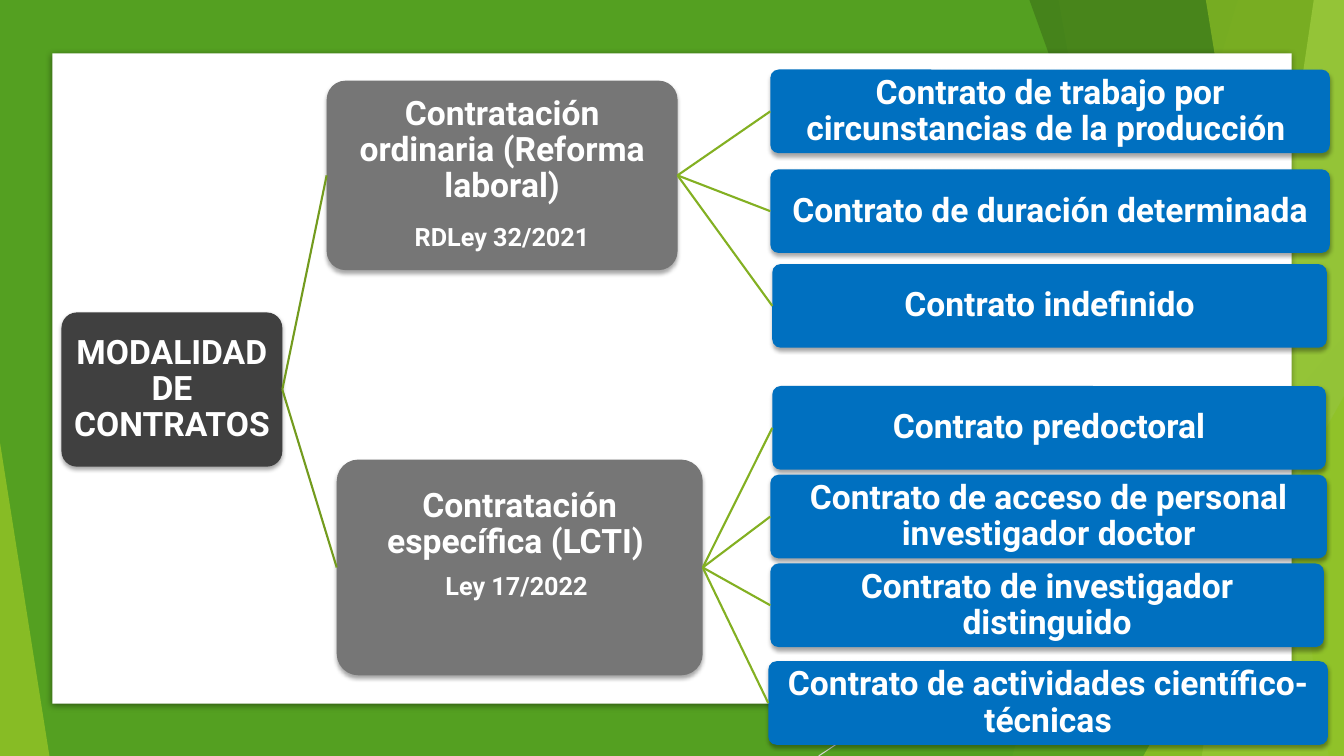
from dataclasses import dataclass

from lxml.etree import SubElement
from pptx import Presentation
from pptx.dml.color import RGBColor
from pptx.enum.shapes import MSO_CONNECTOR, MSO_SHAPE
from pptx.enum.text import MSO_ANCHOR, PP_ALIGN
from pptx.oxml.ns import qn
from pptx.shapes.autoshape import Shape
from pptx.shapes.connector import Connector
from pptx.slide import Slide
from pptx.util import Inches, Pt

WHITE = RGBColor(0xFF, 0xFF, 0xFF)
BLACK = RGBColor(0x00, 0x00, 0x00)
CHARCOAL = RGBColor(0x40, 0x40, 0x40)
GREY = RGBColor(0x76, 0x76, 0x76)
BLUE = RGBColor(0x00, 0x70, 0xC0)
GREEN = RGBColor(0x54, 0xA0, 0x21)
LIME = RGBColor(0x90, 0xC2, 0x26)
DARK_GREEN = RGBColor(0x3F, 0x78, 0x19)
PALE_LIME = RGBColor(0xC0, 0xE4, 0x74)
ROOT_LINE = RGBColor(0x73, 0x9B, 0x1E)
BRANCH_LINE = RGBColor(0x83, 0xB0, 0x22)
PALE_LINE = RGBColor(0xD9, 0xD9, 0xD9)

WIDTH, HEIGHT = 13.33, 7.5
FONT = "Roboto"
RIGHT_SIDE, LEFT_SIDE = 3, 1
LEAF_HEIGHT = 0.83


@dataclass(frozen=True)
class Band:
    """Translucent facet from the top edge to the bottom edge, on the right."""
    top_x: float
    bottom_x: float
    color: RGBColor
    opacity: int


@dataclass(frozen=True)
class Triangle:
    """Translucent right triangle standing on the bottom edge."""
    left: float
    top: float
    width: float
    apex: float
    color: RGBColor
    opacity: int


@dataclass(frozen=True)
class Shadow:
    opacity: int
    blur: float
    distance: float


@dataclass(frozen=True)
class Box:
    left: float
    top: float
    width: float
    height: float
    color: RGBColor
    text: str
    law: str = ""
    law_gap: int = 0
    bottom_inset: float = 0.05


@dataclass(frozen=True)
class Branch:
    box: Box
    leaves: tuple[Box, ...]


def leaf(left: float, top: float, width: float, text: str) -> Box:
    return Box(left, top, width, LEAF_HEIGHT, BLUE, text)


FACETS: tuple[Band | Triangle, ...] = (
    Band(12.28, 10.04, LIME, 30),
    Band(10.5, 11.83, LIME, 20),
    Triangle(9.77, 3.33, 3.56, 1, GREEN, 72),
    Band(10.21, 12.91, DARK_GREEN, 70),
    Band(13.03, 11.92, PALE_LIME, 70),
    Band(11.96, 13.18, LIME, 65),
    Triangle(11.34, 3.93, 1.99, 1, LIME, 80),
    Triangle(0, 4.39, 0.49, 0, LIME, 85),
)
PANEL_SHADOW = Shadow(43, 5, 1.4)
BOX_SHADOW = Shadow(35, 3, 2)

ROOT = Box(0.61, 3.1, 2.19, 1.53, CHARCOAL, "MODALIDAD DE CONTRATOS")
BRANCHES = (
    Branch(
        Box(3.24, 0.8, 3.48, 1.88, GREY, "Contratación ordinaria (Reforma laboral)",
            "RDLey 32/2021", 14, 0.08),
        (
            leaf(7.64, 0.69, 5.55, "Contrato de trabajo por circunstancias de la producción "),
            leaf(7.64, 1.68, 5.55, "Contrato de duración determinada"),
            leaf(7.66, 2.62, 5.5, "Contrato indefinido"),
        ),
    ),
    Branch(
        Box(3.34, 4.56, 3.63, 2.14, GREY, "Contratación específica (LCTI) ",
            "Ley 17/2022 ", 9, 0.5),
        (
            leaf(7.66, 3.83, 5.49, "Contrato predoctoral"),
            leaf(7.64, 4.71, 5.52, "Contrato de acceso de personal investigador doctor"),
            leaf(7.64, 5.59, 5.49, "Contrato de investigador distinguido"),
            leaf(7.62, 6.56, 5.55, "Contrato de actividades científico-técnicas"),
        ),
    ),
)


def paint(shape: Shape, color: RGBColor, opacity: int = 100) -> None:
    shape.shadow.inherit = False
    shape.fill.solid()
    shape.fill.fore_color.rgb = color
    shape.line.fill.background()
    if opacity < 100:
        color_element = shape.fill._xPr.find(qn("a:solidFill"))[0]
        SubElement(color_element, qn("a:alpha"), val=str(opacity * 1000))


def add_shadow(shape: Shape, shadow: Shadow) -> None:
    effects = shape._element.spPr.find(qn("a:effectLst"))
    outer = SubElement(effects, qn("a:outerShdw"), blurRad=str(Pt(shadow.blur)),
                       dist=str(Pt(shadow.distance)), dir="5400000", rotWithShape="0")
    color = SubElement(outer, qn("a:srgbClr"), val=str(BLACK))
    SubElement(color, qn("a:alpha"), val=str(shadow.opacity * 1000))


def add_preset(slide: Slide, kind: MSO_SHAPE, left: float, top: float,
               width: float, height: float) -> Shape:
    return slide.shapes.add_shape(kind, Inches(left), Inches(top),
                                  Inches(width), Inches(height))


def add_facet(slide: Slide, facet: Band | Triangle) -> None:
    if isinstance(facet, Triangle):
        shape = add_preset(slide, MSO_SHAPE.ISOSCELES_TRIANGLE, facet.left, facet.top,
                           facet.width, HEIGHT - facet.top)
        shape.adjustments[0] = facet.apex
    else:
        corners = ((WIDTH, 0), (WIDTH, HEIGHT), (facet.bottom_x, HEIGHT))
        builder = slide.shapes.build_freeform(Inches(facet.top_x), 0)
        builder.add_line_segments([(Inches(x), Inches(y)) for x, y in corners], close=True)
        shape = builder.convert_to_shape()
    paint(shape, facet.color, facet.opacity)


def add_line(slide: Slide, start: tuple[float, float], end: tuple[float, float],
             color: RGBColor, weight: float) -> Connector:
    ends = [Inches(value) for value in (*start, *end)]
    line = slide.shapes.add_connector(MSO_CONNECTOR.STRAIGHT, *ends)
    line.line.color.rgb = color
    line.line.width = Pt(weight)
    SubElement(line._element.spPr, qn("a:effectLst"))
    return line


def add_box(slide: Slide, box: Box) -> Shape:
    shape = add_preset(slide, MSO_SHAPE.ROUNDED_RECTANGLE,
                       box.left, box.top, box.width, box.height)
    shape.adjustments[0] = 0.1
    paint(shape, box.color)
    add_shadow(shape, BOX_SHADOW)
    frame = shape.text_frame
    frame_format = {"word_wrap": True, "vertical_anchor": MSO_ANCHOR.MIDDLE,
                    "margin_left": Inches(0.05), "margin_right": Inches(0.05),
                    "margin_top": Inches(0.05), "margin_bottom": Inches(box.bottom_inset)}
    for name, value in frame_format.items():
        setattr(frame, name, value)
    frame.text = f"{box.text}\n{box.law}" if box.law else box.text
    for paragraph, size in zip(frame.paragraphs, (24, 18)):
        paragraph.alignment = PP_ALIGN.CENTER
        paragraph.line_spacing = 0.9
        for name, value in {"name": FONT, "size": Pt(size), "bold": True}.items():
            setattr(paragraph.font, name, value)
        paragraph.font.color.rgb = WHITE
    frame.paragraphs[0].space_after = Pt(box.law_gap)
    return shape


def join(slide: Slide, parent: Shape, child: Shape, color: RGBColor) -> None:
    line = add_line(slide, (0, 0), (1, 1), color, 1.5)
    line.begin_connect(parent, RIGHT_SIDE)
    line.end_connect(child, LEFT_SIDE)


def main() -> None:
    presentation = Presentation()
    presentation.slide_width, presentation.slide_height = Inches(WIDTH), Inches(HEIGHT)
    slide = presentation.slides.add_slide(presentation.slide_layouts[6])

    # Green faceted background
    paint(add_preset(slide, MSO_SHAPE.RECTANGLE, 0, 0, WIDTH, HEIGHT), GREEN)
    add_line(slide, (WIDTH, 4.03), (8.12, HEIGHT), PALE_LINE, 0.75)
    for facet in FACETS:
        add_facet(slide, facet)

    # White panel
    panel = add_preset(slide, MSO_SHAPE.RECTANGLE, 0.52, 0.53, 12.29, 6.45)
    paint(panel, WHITE)
    add_shadow(panel, PANEL_SHADOW)

    # Tree of contract types
    root = add_box(slide, ROOT)
    for branch in BRANCHES:
        branch_shape = add_box(slide, branch.box)
        join(slide, root, branch_shape, ROOT_LINE)
        for leaf_box in branch.leaves:
            join(slide, branch_shape, add_box(slide, leaf_box), BRANCH_LINE)

    presentation.save("out.pptx")


if __name__ == "__main__":
    main()
